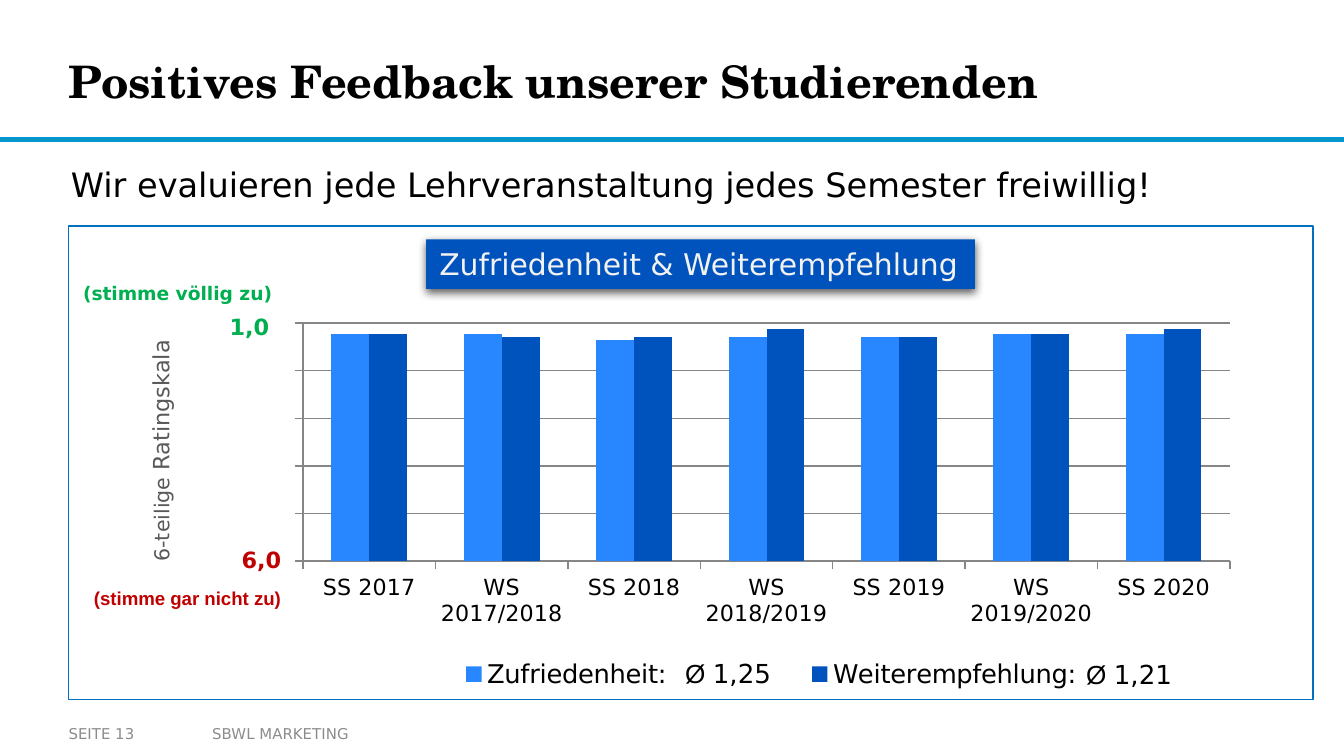
import pptx
import pptx.chart.data
import pptx.dml.color
import pptx.enum.chart
import pptx.enum.shapes
import pptx.enum.text
import pptx.oxml
import pptx.oxml.ns
import pptx.util

Pt = pptx.util.Pt
qn = pptx.oxml.ns.qn
SANS = "DejaVu Sans"
LIGHT_BLUE, DARK_BLUE = "2886FF", "0052BC"
GREEN, RED, GREY = "00B050", "C00000", "8C8C8C"


def color(hex_value):
    return pptx.dml.color.RGBColor.from_string(hex_value)


def write(box, spans, wrap=False, anchor="TOP", margins=(7.2, 3.6)):
    """Fill one paragraph with runs of (text, size, font, colour, bold)."""
    frame = box.text_frame
    frame.word_wrap = wrap
    frame.auto_size = pptx.enum.text.MSO_AUTO_SIZE.NONE
    frame.vertical_anchor = getattr(pptx.enum.text.MSO_ANCHOR, anchor)
    frame.margin_left = frame.margin_right = Pt(margins[0])
    frame.margin_top = frame.margin_bottom = Pt(margins[1])
    para = frame.paragraphs[0]
    para.alignment = pptx.enum.text.PP_ALIGN.LEFT
    for text, size, font, hex_value, bold in spans:
        span = para.add_run()
        span.text = text
        span.font.size = Pt(size)
        span.font.name = font
        span.font.bold = bold
        span.font.color.rgb = color(hex_value)


deck = pptx.Presentation()
deck.slide_width, deck.slide_height = Pt(720), Pt(405)
page = deck.slides.add_slide(deck.slide_layouts[5])
shapes = page.shapes
rectangle = pptx.enum.shapes.MSO_SHAPE.RECTANGLE

# Title and the rule below it
title = shapes.title
title.left, title.top, title.width, title.height = Pt(36.7), Pt(13), Pt(538.6), Pt(60.5)
write(title, [("Positives Feedback unserer Studierenden", 24, "TeX Gyre Schola", "000000", True)],
      wrap=True, anchor="MIDDLE", margins=(0, 0))
rule = shapes.add_shape(rectangle, Pt(0), Pt(74), Pt(720), Pt(1.5))
rule.shadow.inherit = False
rule.fill.solid()
rule.fill.fore_color.rgb = color("0C94B7")
rule.line.color.rgb = color("0096D3")
rule.line.width = Pt(1)

# Chart of the two ratings
data = pptx.chart.data.CategoryChartData()
data.categories = ["SS 2017", "WS 2017/2018", "SS 2018", "WS 2018/2019",
                   "SS 2019", "WS 2019/2020", "SS 2020"]
data.add_series("Zufriedenheit:", [98, 98, 96, 97, 97, 98, 98])
data.add_series("Weiterempfehlung:", [98, 97, 97, 100, 97, 98, 100])
chart = shapes.add_chart(pptx.enum.chart.XL_CHART_TYPE.COLUMN_CLUSTERED,
                         Pt(146.2), Pt(161.3), Pt(557.3), Pt(213.8), data).chart
chart.has_title = False
chart.font.name = SANS
chart.font.size = Pt(17.8)
chart.font.color.rgb = color("000000")
plot = chart.plots[0]
plot.vary_by_categories = False
plot.gap_width = 150
plot.overlap = 0
for series, hex_value in zip(plot.series, (LIGHT_BLUE, DARK_BLUE)):
    series.format.fill.solid()
    series.format.fill.fore_color.rgb = color(hex_value)

# Axes
values, semesters = chart.value_axis, chart.category_axis
values.minimum_scale, values.maximum_scale, values.major_unit = 17, 102, 17
values.tick_label_position = pptx.enum.chart.XL_TICK_LABEL_POSITION.NONE
values.has_major_gridlines = True
semesters.tick_labels.font.size = Pt(11.9)
for axis in (values, semesters):
    axis.major_tick_mark = pptx.enum.chart.XL_TICK_MARK.OUTSIDE
    axis.minor_tick_mark = pptx.enum.chart.XL_TICK_MARK.NONE
for line in (values.format.line, semesters.format.line, values.major_gridlines.format.line):
    line.color.rgb = color("868686")
    line.width = Pt(0.75)

# Legend, then fixed places for plot and legend
chart.has_legend = True
legend = chart.legend
legend.position = pptx.enum.chart.XL_LEGEND_POSITION.BOTTOM
legend.include_in_layout = False
legend.font.size = Pt(13.8)
legend.font.name = SANS
legend.font.color.rgb = color("000000")
chart_xml = chart.element if hasattr(chart, "element") else chart._chartSpace
for tag, index, target, place in (
    ("c:plotArea", 0, '<c:layoutTarget val="inner"/>', (0.029, 0.055, 0.891, 0.597)),
    ("c:legend", 1, "", (0.054, 0.885, 0.85, 0.1)),
):
    parent = next(chart_xml.iter(qn(tag)))
    for old in parent.findall(qn("c:layout")):
        parent.remove(old)
    modes = '<c:xMode val="edge"/><c:yMode val="edge"/>'
    sides = "".join(f'<c:{side} val="{part}"/>' for side, part in zip("xywh", place))
    parent.insert(index, pptx.oxml.parse_xml(
        f'<c:layout {pptx.oxml.ns.nsdecls("c")}><c:manualLayout>'
        f"{target}{modes}{sides}</c:manualLayout></c:layout>"))

# Frame around the chart
border = shapes.add_shape(rectangle, Pt(36.7), Pt(121), Pt(666.7), Pt(253.8))
border.shadow.inherit = False
border.fill.background()
border.line.color.rgb = color("0070C0")
border.line.width = Pt(1)

# Chart heading with a soft shadow
banner = shapes.add_shape(rectangle, Pt(228.3), Pt(128.2), Pt(294), Pt(26.6))
banner.shadow.inherit = False
banner.fill.solid()
banner.fill.fore_color.rgb = color(DARK_BLUE)
banner.line.fill.background()
write(banner, [("Zufriedenheit & Weiterempfehlung", 16, SANS, "F2F2F2", False)])
effects = banner.element.spPr.find(qn("a:effectLst"))
effects.append(pptx.oxml.parse_xml(
    f'<a:outerShdw {pptx.oxml.ns.nsdecls("a")} blurRad="{Pt(4.5)}" dist="{Pt(1.5)}" '
    'dir="5400000" algn="ctr" rotWithShape="0"><a:srgbClr val="000000">'
    '<a:alpha val="63000"/></a:srgbClr></a:outerShdw>'))

# Scale labels, averages and introduction: place, wrap, runs
labels = [
    ((37.4, 147.6, 118, 19.4), False, [("(stimme völlig zu)", 10, SANS, GREEN, True)]),
    ((43.2, 311, 118, 19.4), True, [("(stimme gar nicht zu)", 10, "Arial", RED, True)]),
    ((116, 164.2, 36, 21.8), False, [("1,0", 12, SANS, GREEN, True)]),
    ((122.4, 288.8, 36, 21.8), False, [("6,0", 12, SANS, RED, True)]),
    ((360, 348.7, 79.2, 24.3), True,
     [("Ø ", 14, "Arial", "000000", False), ("1,25", 14, SANS, "000000", False)]),
    ((574.8, 349.2, 79.2, 24.3), True,
     [("Ø ", 14, "Arial", "000000", False), ("1,21", 14, SANS, "000000", False)]),
    ((30.9, 84.2, 624, 29), True,
     [("Wir evaluieren jede Lehrveranstaltung jedes Semester freiwillig!",
       18, SANS, "000000", False)]),
]
for place, wrap, spans in labels:
    write(shapes.add_textbox(*map(Pt, place)), spans, wrap)

# Rotated axis caption
caption = shapes.add_textbox(Pt(16.6), Pt(227.5), Pt(139), Pt(21.8))
caption.rotation = 270
write(caption, [("6-teilige", 11, SANS, "595959", False),
                (" Ratingskala", 12, SANS, "595959", False)])

# Footer
for left, width, margin, text in ((36.7, 70.6, 0, "SEITE 13"),
                                  (106.6, 253.4, 7.2, "SBWL MARKETING")):
    footer = shapes.add_textbox(Pt(left), Pt(383.8), Pt(width), Pt(18))
    write(footer, [(text, 8, SANS, GREY, False)], wrap=True, anchor="MIDDLE",
          margins=(margin, 3.6))

deck.save("out.pptx")
